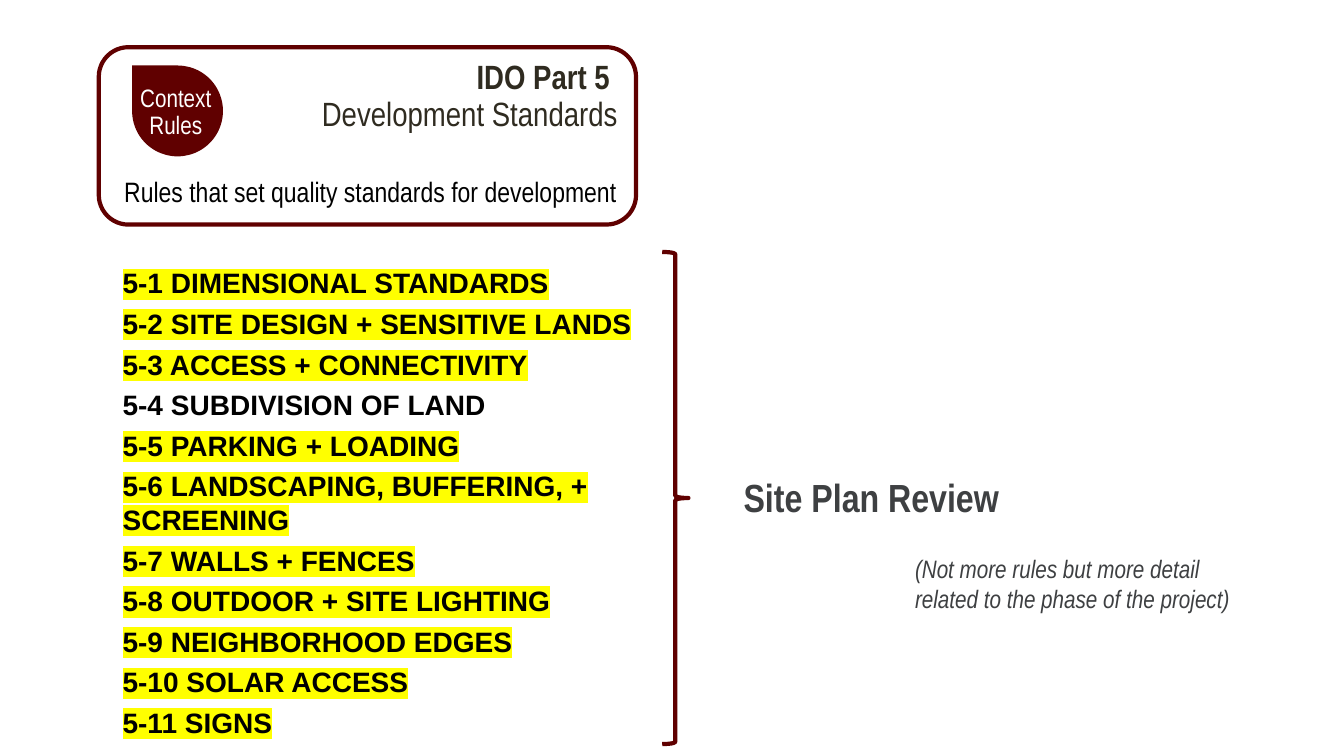
"""Build the slide on development standards and site plan review."""
from dataclasses import dataclass

from lxml import etree
from pptx import Presentation, util as u
from pptx.dml.color import RGBColor
from pptx.enum import shapes, text
from pptx.oxml.ns import qn

CARD_TITLE = ["IDO Part 5 ", "Development Standards"]
CARD_RULE = "Rules that set quality standards for development"
BADGE = "Context Rules"
SECTIONS = [
    ("5-1 DIMENSIONAL STANDARDS", True),
    ("5-2 SITE DESIGN + SENSITIVE LANDS", True),
    ("5-3 ACCESS + CONNECTIVITY", True),
    ("5-4 SUBDIVISION OF LAND", False),
    ("5-5 PARKING + LOADING", True),
    ("5-6 LANDSCAPING, BUFFERING, + SCREENING", True),
    ("5-7 WALLS + FENCES", True),
    ("5-8 OUTDOOR + SITE LIGHTING", True),
    ("5-9 NEIGHBORHOOD EDGES", True),
    ("5-10 SOLAR ACCESS", True),
    ("5-11 SIGNS", True),
]
REVIEW = "Site Plan Review"
REVIEW_NOTE = "(Not more rules but more detail related to the phase of the project)"

LIST_TOP, LIST_HEIGHT = 6.35, 12.4


@dataclass(frozen=True)
class Theme:
    """Colours, fonts and type sizes."""
    maroon: str = "600000"
    white: str = "FFFFFF"
    black: str = "000000"
    olive: str = "2F2B20"
    grey: str = "3E4042"
    yellow: str = "FFFF00"
    narrow: str = "Arial Narrow"
    wide: str = "Arial"
    small: int = 18
    body: int = 20
    title: int = 24
    large: int = 28
    outline: int = 3


THEME = Theme()


def place(box):
    return [u.Cm(length) for length in box]


def add_shape(slide, kind, box, fill=None, line=None):
    shape = slide.shapes.add_shape(kind, *place(box))
    shape.shadow.inherit = False
    if fill:
        shape.fill.solid()
        shape.fill.fore_color.rgb = RGBColor.from_string(fill)
    else:
        shape.fill.background()
    if line:
        shape.line.color.rgb = RGBColor.from_string(line)
        shape.line.width = u.Pt(THEME.outline)
    else:
        shape.line.fill.background()
    return shape


def add_text_box(slide, box, anchor=text.MSO_ANCHOR.TOP):
    frame = slide.shapes.add_textbox(*place(box)).text_frame
    frame.word_wrap = True
    frame.vertical_anchor = anchor
    return frame


def write(paragraph, words, size, color, font=THEME.narrow, bold=False,
          italic=False, align=text.PP_ALIGN.LEFT, spacing=None, highlight=None):
    paragraph.alignment = align
    paragraph.line_spacing = spacing
    run = paragraph.add_run()
    run.text = words
    run.font.size = u.Pt(size)
    run.font.bold = bold
    run.font.italic = italic
    run.font.name = font
    run.font.color.rgb = RGBColor.from_string(color)
    if highlight:
        marker = etree.Element(qn("a:highlight"))
        etree.SubElement(marker, qn("a:srgbClr"), val=highlight)
        run.font._element.find(qn("a:latin")).addprevious(marker)


def next_paragraph(frame, index):
    return frame.add_paragraph() if index else frame.paragraphs[0]


def add_card(slide):
    right = text.PP_ALIGN.RIGHT
    card = add_shape(slide, shapes.MSO_SHAPE.ROUNDED_RECTANGLE,
                     (2.49, 1.19, 13.54, 4.47), THEME.white, THEME.maroon)
    card.text_frame.vertical_anchor = text.MSO_ANCHOR.TOP
    for index, words in enumerate(CARD_TITLE):
        write(next_paragraph(card.text_frame, index), words, THEME.title,
              THEME.olive, bold=index == 0, align=right, spacing=0.9)
    rule = add_text_box(slide, (2.79, 3.71, 13, 2.21), text.MSO_ANCHOR.MIDDLE)
    write(rule.paragraphs[0], CARD_RULE, THEME.body, THEME.black, align=right)

    drop = add_shape(slide, shapes.MSO_SHAPE.TEAR,
                     (3.33, 1.65, 2.29, 2.29), THEME.maroon)
    drop.rotation = 270
    badge = add_text_box(slide, (3.25, 2.03, 2.36, 1.7))
    write(badge.paragraphs[0], BADGE, THEME.small, THEME.white,
          align=text.PP_ALIGN.CENTER, spacing=0.9)


def add_sections(slide):
    frame = add_text_box(slide, (2.84, LIST_TOP, 15.9, LIST_HEIGHT),
                         text.MSO_ANCHOR.BOTTOM)
    for index, (words, marked) in enumerate(SECTIONS):
        paragraph = next_paragraph(frame, index)
        if index:
            paragraph.space_before = u.Pt(5)
        write(paragraph, words, THEME.body, THEME.black, THEME.wide, bold=True,
              highlight=THEME.yellow if marked else None)
    add_shape(slide, shapes.MSO_SHAPE.RIGHT_BRACE,
              (16.69, LIST_TOP, 0.66, LIST_HEIGHT), line=THEME.maroon)


def add_review(slide):
    review = add_text_box(slide, (18.49, 11.81, 8.61, 1.45))
    write(review.paragraphs[0], REVIEW, THEME.large, THEME.grey, bold=True)
    note = add_text_box(slide, (22.81, 13.82, 8.97, 1.8))
    write(note.paragraphs[0], REVIEW_NOTE, THEME.small, THEME.grey, italic=True)


def main():
    presentation = Presentation()
    presentation.slide_width, presentation.slide_height = place((33.87, 19.05))
    slide = presentation.slides.add_slide(presentation.slide_layouts[6])
    add_card(slide)
    add_sections(slide)
    add_review(slide)
    presentation.save("out.pptx")


if __name__ == "__main__":
    main()
